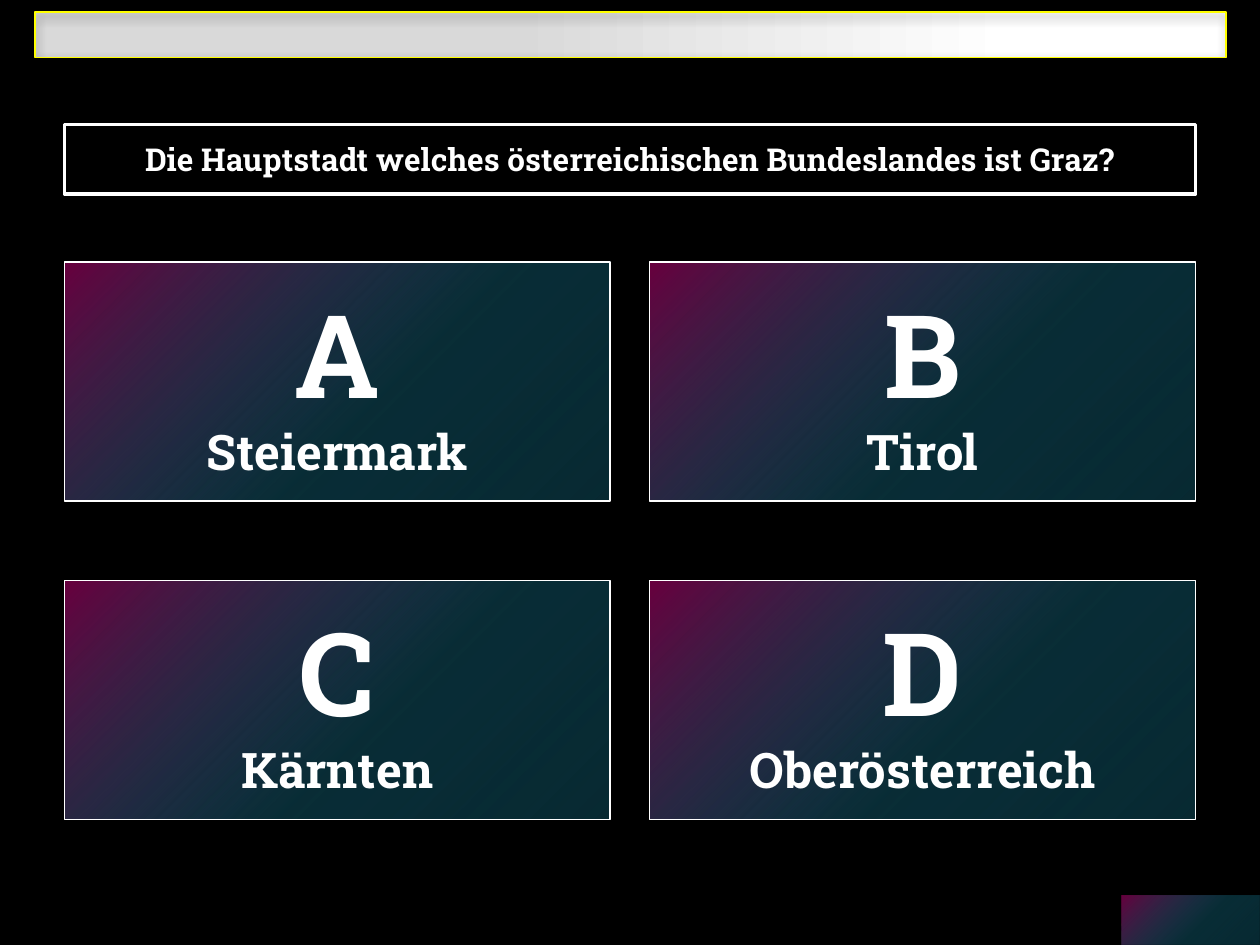
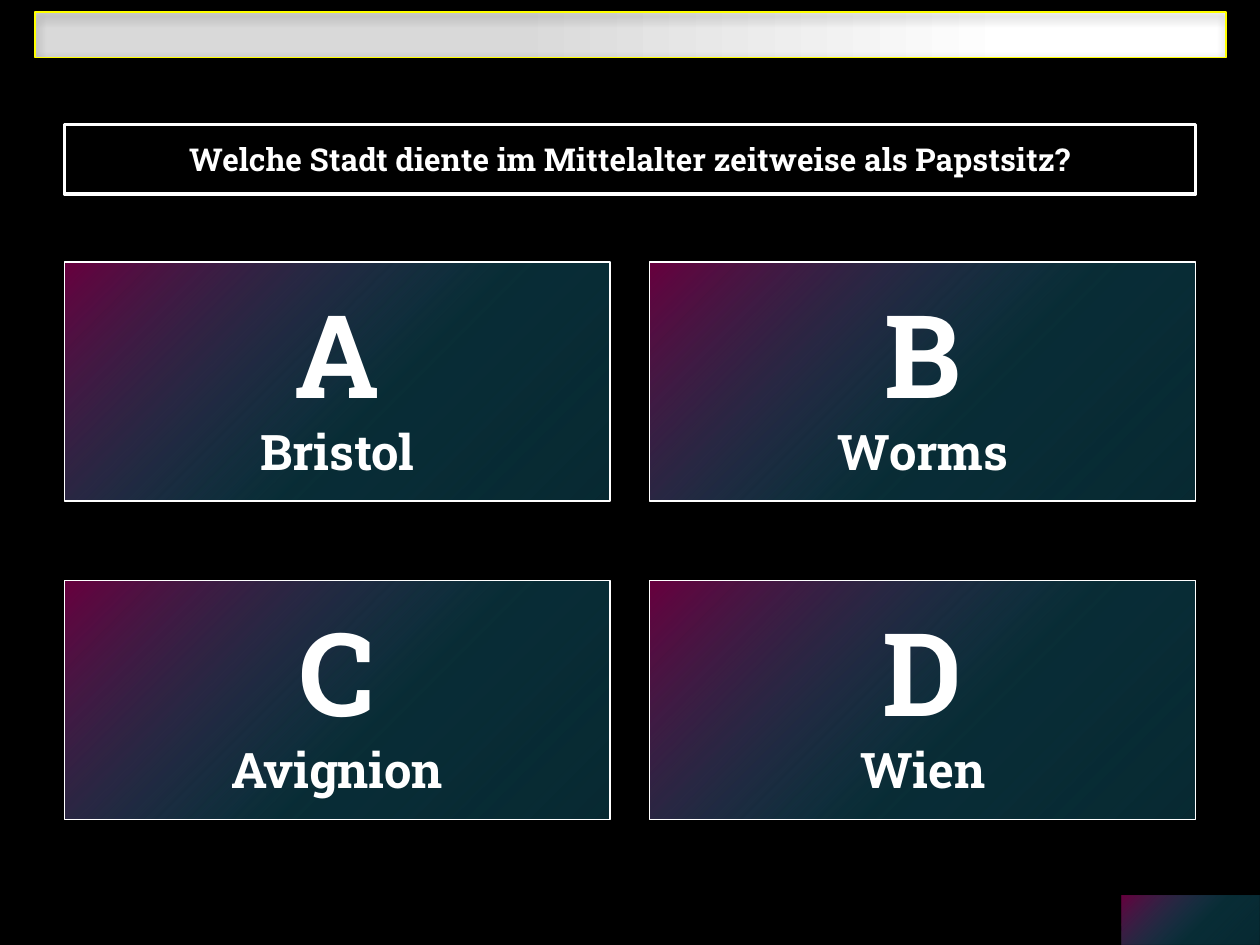
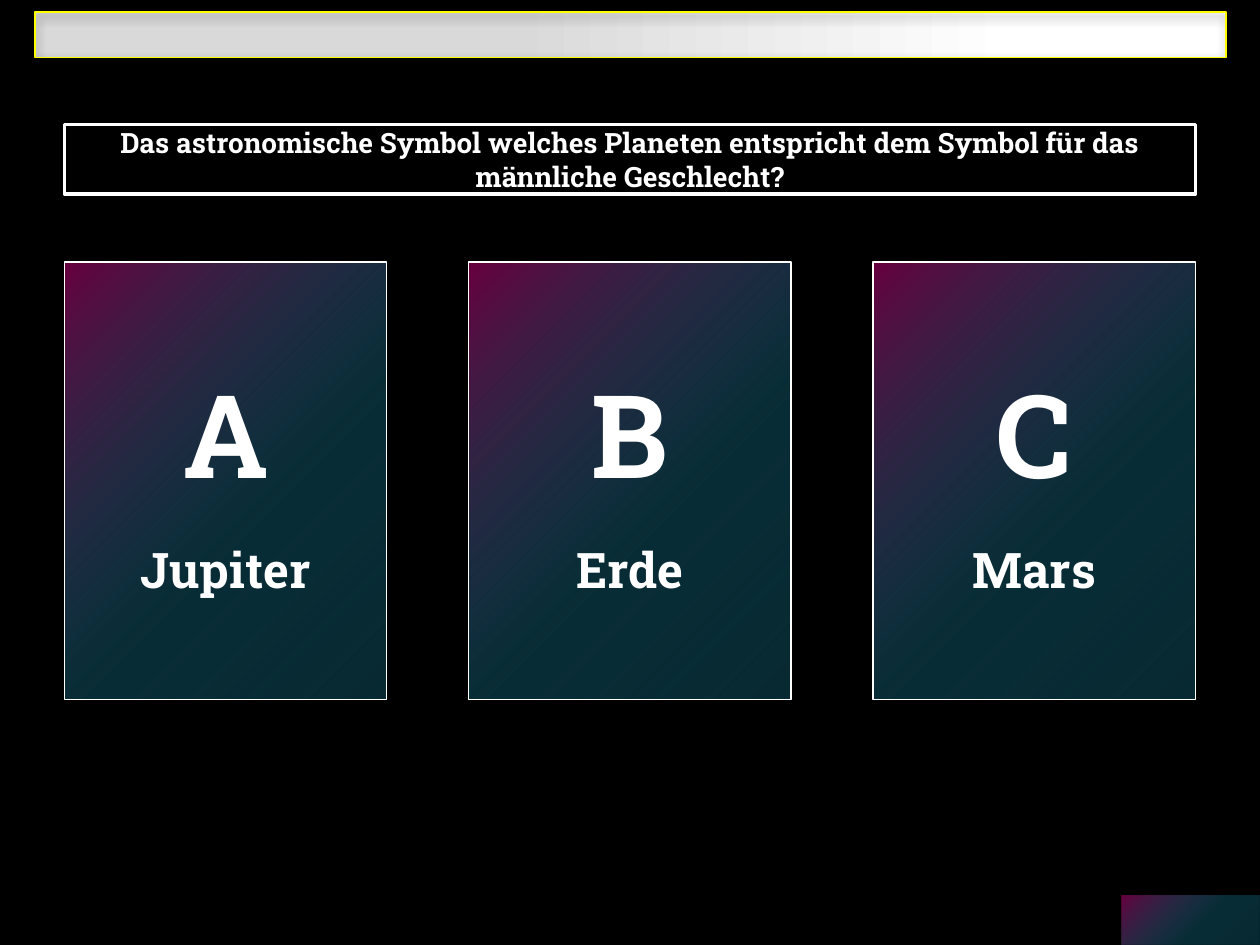
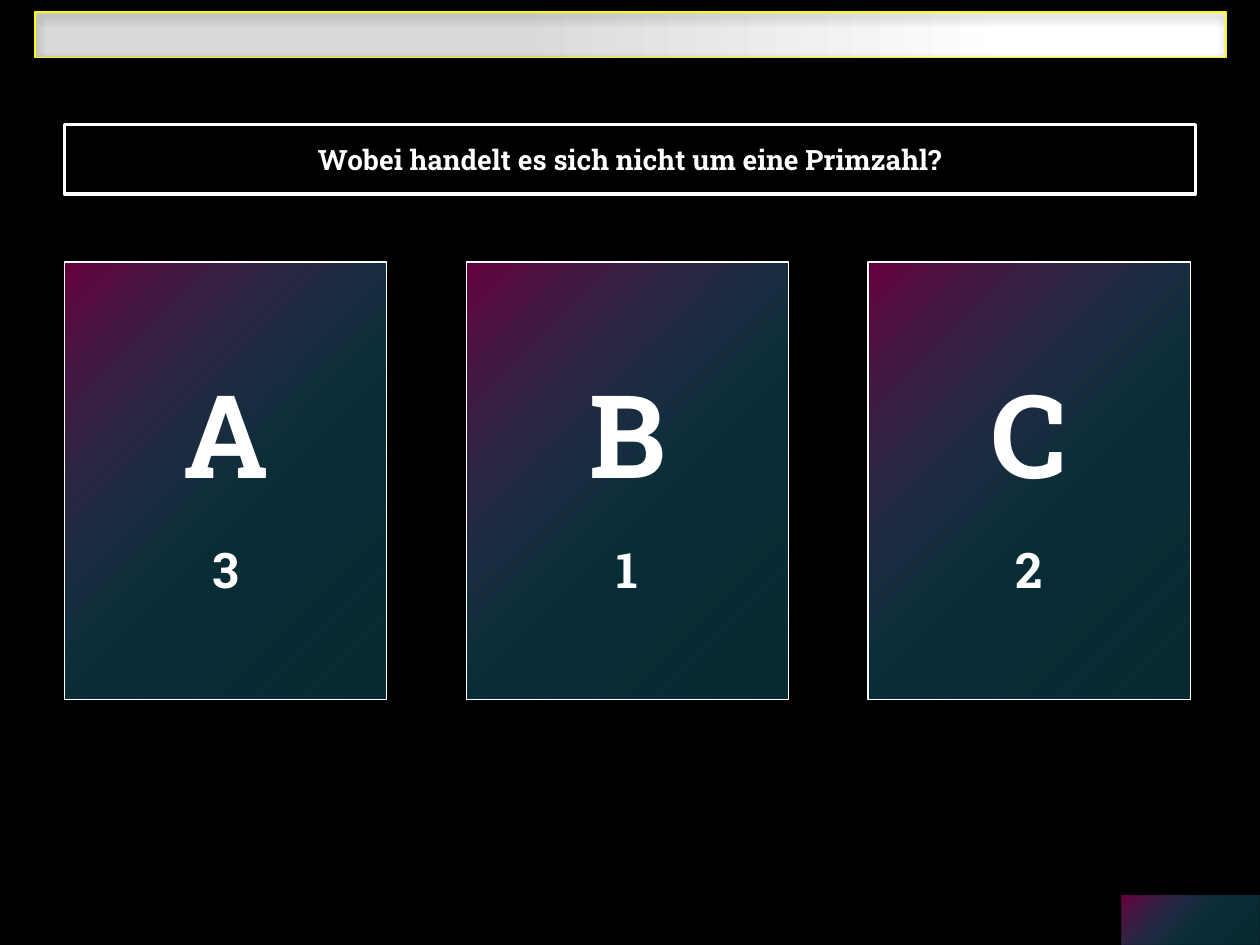
import pptx
import pptx.util
import pptx.dml.color
import pptx.enum.shapes
import pptx.enum.text
import pptx.oxml
import pptx.oxml.ns

Cm = pptx.util.Cm
Pt = pptx.util.Pt
qn = pptx.oxml.ns.qn
NS = pptx.oxml.ns.nsdecls("a")

# Gradient stops: position, colour, opacity (all in percent but the colour)
DEEP = [(0, "68003E", 100), (58, "14687D", 43), (100, "187B94", 33)]
SILVER = [(40, "D9D9D9", 100), (82, "FFFFFF", 100)]

# Shared measures in cm
LEFT, WIDE = 1.3, 22.8


def color(code):
    return pptx.dml.color.RGBColor.from_string(code)


def write(para, text, size=18, font="Roboto Slab", ink="FFFFFF", bold=True, before=0):
    """Put formatted, centred text into a paragraph."""
    para.alignment = pptx.enum.text.PP_ALIGN.CENTER
    if before:
        para.space_before = Pt(before)
    run = para.add_run()
    run.text = text
    run.font.size, run.font.name, run.font.bold = Pt(size), font, bold
    run.font.color.rgb = color(ink)


class Quiz:
    def __init__(self):
        self.deck = pptx.Presentation()
        self.deck.slide_width, self.deck.slide_height = Cm(25.4), Cm(19.05)
        back = self.deck.slide_master.background.fill
        back.solid()
        back.fore_color.rgb = color("000000")
        self.slide = None

    # Outline and fill helpers
    def edge(self, shape, ink, width):
        shape.line.color.rgb = color(ink)
        shape.line.width = Pt(width)

    def blend(self, shape, stops, angle):
        shape.fill.gradient()
        shape.fill.gradient_angle = (360 - angle) % 360
        marks = shape._element.spPr.find(qn("a:gradFill")).find(qn("a:gsLst"))
        for mark in list(marks):
            marks.remove(mark)
        for place, code, alpha in stops:
            marks.append(pptx.oxml.parse_xml(
                f'<a:gs {NS} pos="{place * 1000}"><a:srgbClr val="{code}">'
                f'<a:alpha val="{alpha * 1000}"/></a:srgbClr></a:gs>'))

    def shade(self, shape):
        effect = shape._element.spPr.find(qn("a:effectLst"))
        effect.append(pptx.oxml.parse_xml(
            f'<a:outerShdw {NS} blurRad="{Pt(6)}" dist="{Pt(2)}" dir="5400000" '
            'rotWithShape="0"><a:srgbClr val="000000"><a:alpha val="50000"/>'
            '</a:srgbClr></a:outerShdw>'))

    # Elements
    def box(self, left, top, width, height, stops=None, angle=45, ink=None, line=0.75):
        shape = self.slide.shapes.add_shape(
            pptx.enum.shapes.MSO_SHAPE.RECTANGLE,
            Cm(left), Cm(top), Cm(width), Cm(height))
        shape.shadow.inherit = False
        if stops:
            self.blend(shape, stops, angle)
        else:
            shape.fill.background()
        if ink:
            self.edge(shape, ink, line)
        else:
            shape.line.fill.background()
        return shape

    def timer(self):
        for stops, ink in ((SILVER, "000000"), (None, "FFFF00")):
            self.shade(self.box(0.71, 0.25, 24, 0.91, stops, 0, ink, 1))

    def title(self, text, size):
        title = self.slide.shapes.title
        title.left, title.top = Cm(LEFT), Cm(2.51)
        title.width, title.height = Cm(WIDE), Cm(1.4)
        title.fill.solid()
        title.fill.fore_color.rgb = color("000000")
        self.edge(title, "FFFFFF", 2)
        frame = title.text_frame
        frame.auto_size = pptx.enum.text.MSO_AUTO_SIZE.NONE
        frame.vertical_anchor = pptx.enum.text.MSO_ANCHOR.MIDDLE
        write(frame.paragraphs[0], text, size=size)

    def card(self, left, top, width, height, letter, answer, gap):
        shape = self.box(left, top, width, height, DEEP, ink="FFFFFF")
        frame = shape.text_frame
        frame.word_wrap = True
        frame.vertical_anchor = pptx.enum.text.MSO_ANCHOR.MIDDLE
        write(frame.paragraphs[0], letter, size=66)
        write(frame.add_paragraph(), answer, size=28, before=gap)

    # One question with its grid of answers
    def ask(self, text, answers, size, cols, step, width, height, gap=0):
        self.slide = self.deck.slides.add_slide(self.deck.slide_layouts[5])
        self.timer()
        self.title(text, size)
        self.box(22.61, 18.06, 2.79, 0.99, DEEP)
        for num, (letter, answer) in enumerate(zip("ABCD", answers)):
            row, col = divmod(num, cols)
            self.card(LEFT + col * step, 5.28 + row * 6.42, width, height,
                      letter, answer, gap)


def main():
    quiz = Quiz()
    four = dict(size=18, cols=2, step=11.8, width=11, height=4.82)
    three = dict(size=16, cols=3, width=6.5, height=8.82, gap=22)

    # Four answers
    quiz.ask("Die Hauptstadt welches österreichischen Bundeslandes ist Graz?",
             ["Steiermark", "Tirol", "Kärnten", "Oberösterreich"], **four)
    quiz.ask("Welche Stadt diente im Mittelalter zeitweise als Papstsitz?",
             ["Bristol", "Worms", "Avignion", "Wien"], **four)

    # Three answers
    quiz.ask("Das astronomische Symbol welches Planeten entspricht dem Symbol "
             "für das männliche Geschlecht?",
             ["Jupiter", "Erde", "Mars"], step=8.15, **three)
    quiz.ask("Wobei handelt es sich nicht um eine Primzahl?",
             ["3", "1", "2"], step=8.1, **three)

    quiz.deck.save("out.pptx")


if __name__ == "__main__":
    main()
